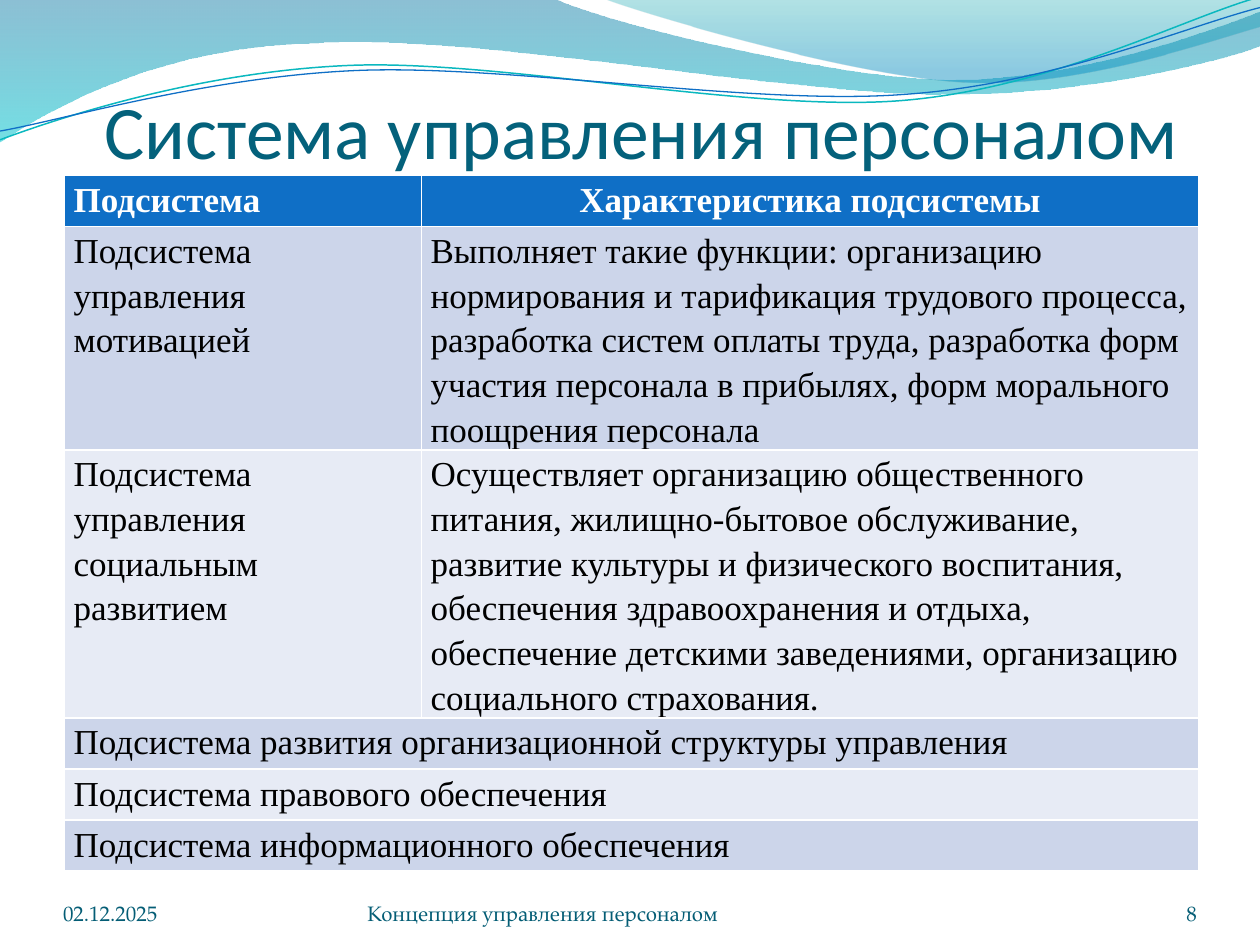
"""Build the slide about the personnel management system."""
import math
from dataclasses import dataclass

from lxml import etree
from pptx import Presentation
from pptx import util as u
from pptx.dml.color import RGBColor
from pptx.enum import text
from pptx.oxml.ns import qn

Pt = u.Pt


@dataclass(frozen=True)
class Theme:
    """Colours, fonts and type sizes of the slide."""
    title: str = "04617B"
    footer: str = "045D75"
    accent: str = "0F6FC6"
    teal: str = "0AB8BF"
    white: str = "FFFFFF"
    black: str = "000000"
    bands: tuple = ("CCD5EA", "E7EBF5")
    large_wave: tuple = ((0, "0074A1", 45), (1, "00C6CF", 55))
    small_wave: tuple = ((0, "00A1A9", 30), (0.8, "008BBF", 45))
    title_font: str = "Calibri"
    table_font: str = "Times New Roman"
    footer_font: str = "TeX Gyre Pagella"
    title_size: float = 43.2
    table_size: float = 20
    footer_size: float = 12


@dataclass(frozen=True)
class Box:
    """A region of the slide in points."""
    left: float
    top: float
    width: float
    height: float

    def place(self):
        """Return the four lengths for a shape."""
        return [Pt(value) for value in (self.left, self.top, self.width, self.height)]


THEME = Theme()
LINE_ROTATION = 357.3

LARGE_WAVE = [
    (0, 0), (316.8, -0.7),
    (342.7, 12.2, 478.1, 45.4, 545.8, 45.4), (614.2, 45.4, 689.8, 18.7, 720, 6.5),
    (720.7, 25.9), (707.8, 31.7, 626.4, 54.7, 537.1, 54),
    (447.8, 54, 275, 20.2, 185, 24.5), (92.9, 25.9, 33.1, 59.8, -0.7, 81.4), (0, 0),
]
SMALL_WAVE = [
    (344.9, -0.7), (366.5, 7.9, 491, 44.6, 553.7, 46.8),
    (616.3, 49.7, 691.9, 23, 720, 15.1), (720, 0), (344.9, -0.7),
]
TEAL_LINE = [
    (0, 79.9), (34.6, 67, 113.8, 41, 199.4, 37.4),
    (284.4, 33.8, 427, 64.1, 513.4, 57.6), (599.8, 51.1, 675.4, 10.8, 718.6, -1.4),
]
BLUE_LINE = [
    (0, 74.9), (33.8, 69.1, 118.1, 43.9, 203.8, 40.3),
    (290.2, 36.7, 429.8, 60.5, 516.2, 54), (601.9, 48.2, 677.5, 15.1, 720, 4.3),
]

ROWS = [
    ("Подсистема", "Характеристика подсистемы"),
    ("Подсистема управления мотивацией",
     "Выполняет такие функции: организацию нормирования и тарификация трудового "
     "процесса, разработка систем оплаты труда, разработка форм участия персонала "
     "в прибылях, форм морального поощрения персонала"),
    ("Подсистема управления социальным развитием",
     "Осуществляет организацию общественного питания, жилищно-бытовое обслуживание, "
     "развитие культуры и физического воспитания, обеспечения здравоохранения и "
     "отдыха, обеспечение детскими заведениями, организацию социального страхования."),
    ("Подсистема развития организационной структуры управления",),
    ("Подсистема правового обеспечения",),
    ("Подсистема информационного обеспечения",),
]


def add_run(paragraph, words, font, size, color, bold=False):
    """Add one formatted run."""
    run = paragraph.add_run()
    run.text = words
    run.font.name, run.font.size, run.font.bold = font, Pt(size), bold
    run.font.color.rgb = RGBColor.from_string(color)


def local_point(box, x, y, rotation):
    """Express a slide point in the unrotated coordinates of the box."""
    angle = math.radians(-rotation)
    across = x - box.left - box.width / 2
    down = y - box.top - box.height / 2
    return (Pt(box.width / 2 + across * math.cos(angle) - down * math.sin(angle)),
            Pt(box.height / 2 + across * math.sin(angle) + down * math.cos(angle)))


def add_outline(slide, box, steps, close, rotation=0):
    """Add a freeform of straight and cubic steps inside the box."""
    anchors = [(Pt(step[-2]), Pt(step[-1])) for step in steps]
    builder = slide.shapes.build_freeform(*anchors[0], scale=1.0)
    builder.add_line_segments(anchors[1:], close=close)
    shape = builder.convert_to_shape()
    shape.left, shape.top, shape.width, shape.height = box.place()
    shape.rotation = rotation
    shape.shadow.inherit = False
    outline = next(shape.element.iter(qn("a:path")))
    outline.set("w", str(Pt(box.width)))
    outline.set("h", str(Pt(box.height)))
    for segment, step in zip(list(outline), steps):
        if len(step) == 6:
            curve = etree.Element(qn("a:cubicBezTo"))
            outline.replace(segment, curve)
            segment = curve
        for point in list(segment):
            segment.remove(point)
        for x, y in zip(step[::2], step[1::2]):
            across, down = local_point(box, x, y, rotation)
            etree.SubElement(segment, qn("a:pt"), x=str(across), y=str(down))
    return shape


def add_waves(slide, box):
    """Draw the wave bands and the two thin lines."""
    right = box.left + box.width
    large = Box(box.left - 0.7, box.top - 0.7, box.width + 1.4, box.height)
    small = Box(right - 375.1, box.top - 0.7, 375.1, 50.4)
    for part, steps, stops in ((large, LARGE_WAVE, THEME.large_wave),
                               (small, SMALL_WAVE, THEME.small_wave)):
        shape = add_outline(slide, part, steps, True)
        shape.line.fill.background()
        shape.fill.gradient()
        shape.fill.gradient_angle = 270
        for stop, (position, color, _) in zip(shape.fill.gradient_stops, stops):
            stop.position = position
            stop.color.rgb = RGBColor.from_string(color)
        for element, (_, _, opacity) in zip(shape.element.spPr.iter(qn("a:srgbClr")), stops):
            etree.SubElement(element, qn("a:alpha"), val=str(opacity * 1000))
    teal = Box(box.left - 1.4, box.top + 15.8, box.width + 1.4, 51.1)
    blue = Box(box.left - 1.4, box.top + 21.6, box.width + 2.2, 41.8)
    for part, steps, color, width in ((teal, TEAL_LINE, THEME.teal, 0.85),
                                      (blue, BLUE_LINE, THEME.accent, 0.75)):
        shape = add_outline(slide, part, steps, False, LINE_ROTATION)
        shape.fill.background()
        shape.line.color.rgb = RGBColor.from_string(color)
        shape.line.width = Pt(width)


def set_frame(frame, top=0):
    """Give a text frame its insets, wrapping and bottom anchor."""
    frame.margin_left = frame.margin_right = frame.margin_bottom = 0
    frame.margin_top = Pt(top)
    frame.word_wrap = True
    frame.auto_size = text.MSO_AUTO_SIZE.NONE
    frame.vertical_anchor = text.MSO_ANCHOR.BOTTOM


def add_title(slide, box):
    """Place the title in front of the waves."""
    title = slide.shapes.title
    title.left, title.top, title.width, title.height = box.place()
    set_frame(title.text_frame, 3.6)
    paragraph = title.text_frame.paragraphs[0]
    paragraph.alignment = text.PP_ALIGN.LEFT
    add_run(paragraph, "Система управления персоналом",
            THEME.title_font, THEME.title_size, THEME.title)
    slide.shapes.element.append(title.element)


def add_subsystem_table(slide, box):
    """Add the table of subsystems, whose rows grow with their text."""
    frame = slide.shapes.add_table(len(ROWS), 2, *box.place())
    table = frame.table
    first_width = 204
    table.columns[0].width = Pt(first_width)
    table.columns[1].width = Pt(box.width - first_width)
    for index, words in enumerate(ROWS):
        header = index == 0
        table.rows[index].height = Pt(29.2)
        if len(words) == 1:
            table.cell(index, 0).merge(table.cell(index, 1))
        for column, content in enumerate(words):
            cell = table.cell(index, column)
            cell.fill.solid()
            cell.fill.fore_color.rgb = RGBColor.from_string(
                THEME.accent if header else THEME.bands[(index - 1) % 2])
            cell.margin_left = cell.margin_right = Pt(5.2)
            cell.margin_top = cell.margin_bottom = 0
            paragraph = cell.text_frame.paragraphs[0]
            paragraph.line_spacing = 1.15
            if header and column == 1:
                paragraph.alignment = text.PP_ALIGN.CENTER
            add_run(paragraph, content, THEME.table_font, THEME.table_size,
                    THEME.white if header else THEME.black, header)
    frame.height = Pt(box.height)


def add_footer(slide, box):
    """Add the date, the footer and the slide number."""
    left, right = text.PP_ALIGN.LEFT, text.PP_ALIGN.RIGHT
    for offset, width, words, alignment in (
            (0, 168, "02.12.2025", left),
            (174, 264, "Концепция управления персоналом", left),
            (box.width - 60, 60, "8", right)):
        part = Box(box.left + offset, box.top, width, box.height)
        frame = slide.shapes.add_textbox(*part.place()).text_frame
        set_frame(frame)
        frame.paragraphs[0].alignment = alignment
        add_run(frame.paragraphs[0], words, THEME.footer_font, THEME.footer_size, THEME.footer)


def main():
    """Build and save the presentation."""
    presentation = Presentation()
    presentation.slide_width, presentation.slide_height = Pt(720), Pt(540)
    slide = presentation.slides.add_slide(presentation.slide_layouts[5])
    add_waves(slide, Box(0, 0, 720, 82.1))
    add_title(slide, Box(59.8, 55.4, 640.8, 44.6))
    add_subsystem_table(slide, Box(36.9, 100.3, 648, 420.5))
    add_footer(slide, Box(36, 500.4, 648, 28.8))
    presentation.save("out.pptx")


if __name__ == "__main__":
    main()
